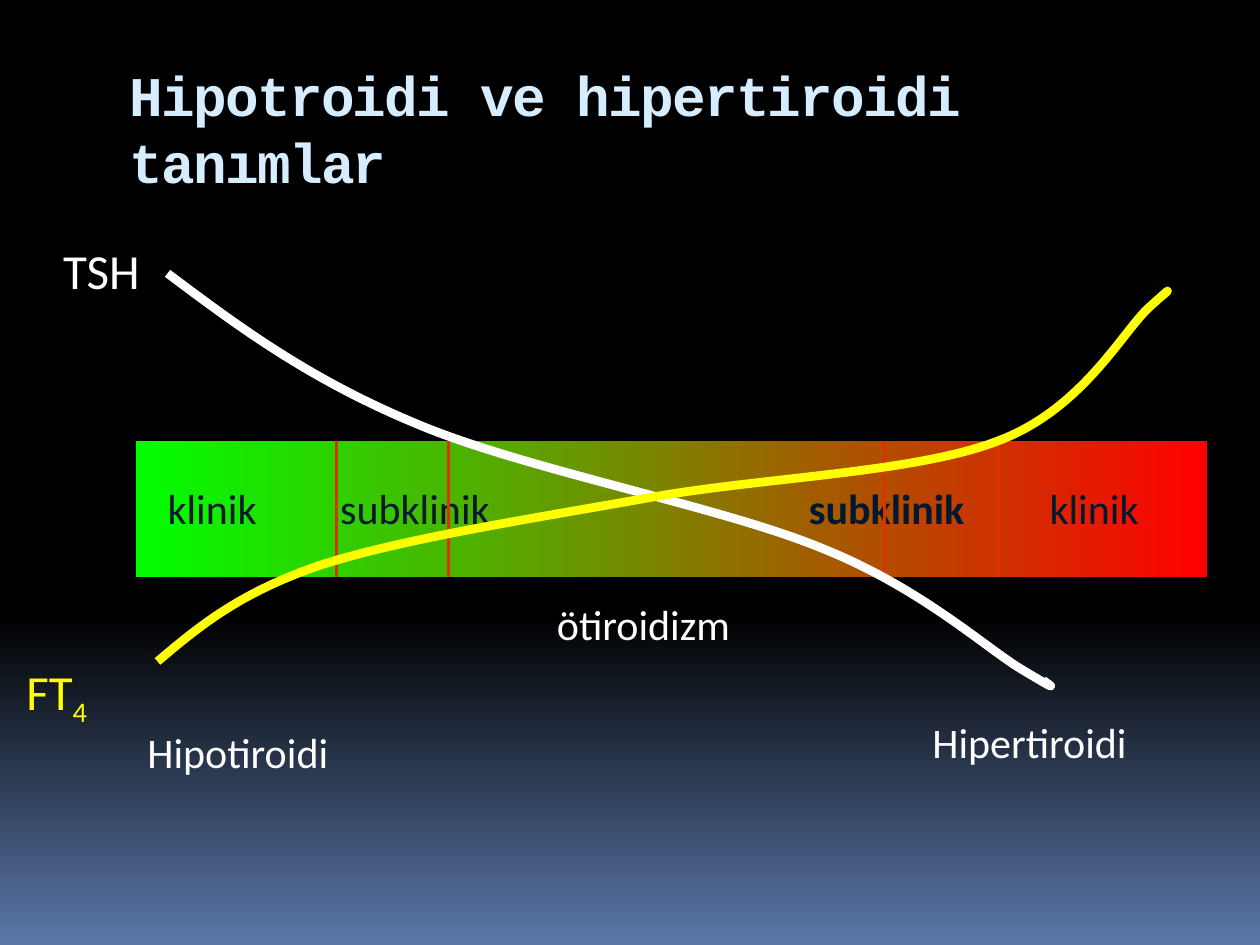
from lxml import etree
from pptx import Presentation
from pptx.dml.color import RGBColor
from pptx.enum.shapes import MSO_CONNECTOR, MSO_SHAPE
from pptx.enum.text import MSO_ANCHOR
from pptx.oxml.ns import qn
from pptx.util import Inches, Pt

STRAIGHT = MSO_CONNECTOR.STRAIGHT
RECTANGLE = MSO_SHAPE.RECTANGLE
MIDDLE = MSO_ANCHOR.MIDDLE

COLORS = {
    "black": "000000",
    "blue": "5B77A8",
    "green": "00FF00",
    "red": "FF0000",
    "title": "D6ECFF",
    "white": "FFFFFF",
    "yellow": "FFFF00",
    "navy": "00192F",
    "divider": "D83300",
}

BAND_LEFT, BAND_TOP, BAND_WIDTH, BAND_HEIGHT = 1.08, 3.5, 8.5, 1.08
BAND_LABEL_TOP = 3.83
DIVIDERS = (3.56, 2.67, 7.92, 7.02)

TSH_CURVE = [
    (1.33, 2.17),
    (1.89, 2.59), (2.45, 3.01), (3.32, 3.37),
    (4.18, 3.73), (5.72, 4.02), (6.52, 4.35),
    (7.32, 4.67), (7.83, 5.15), (8.12, 5.32),
    (8.42, 5.5), (8.35, 5.45), (8.28, 5.4),
]
FT4_CURVE = [
    (1.25, 5.25),
    (1.57, 4.98), (1.89, 4.71), (2.53, 4.49),
    (3.17, 4.28), (4.2, 4.12), (5.1, 3.96),
    (6, 3.79), (7.25, 3.76), (7.92, 3.5),
    (8.59, 3.25), (8.91, 2.63), (9.12, 2.44),
    (9.33, 2.25), (9.27, 2.31), (9.21, 2.36),
]


def rgb(name):
    """Return the named colour."""
    return RGBColor.from_string(COLORS[name])


def set_gradient(fill, start, end, angle, start_position=0):
    """Apply a linear gradient between two named colours."""
    fill.gradient()
    fill.gradient_angle = angle
    first, last = fill.gradient_stops
    first.color.rgb, first.position = rgb(start), start_position
    last.color.rgb, last.position = rgb(end), 1


def style_run(run, size, color, bold=False, font_name="Calibri"):
    """Set the font of a run."""
    run.font.name = font_name
    run.font.size = Pt(size)
    run.font.bold = bold
    run.font.color.rgb = rgb(color)


def add_title(slide, text):
    """Add the slide title with slightly tightened letters."""
    box = slide.shapes.add_textbox(Inches(0.93), Inches(0.39), Inches(8.83), Inches(1.25))
    frame = box.text_frame
    frame.text = text
    frame.word_wrap = True
    frame.vertical_anchor = MIDDLE
    run = frame.paragraphs[0].runs[0]
    style_run(run, 32, "title", True, "Courier New")
    run.font._element.set("spc", "-100")


def add_label(shapes, text, left, top, width, color, size=24, bold=False, wrap=False):
    """Add a text box without margins and return its paragraph."""
    box = shapes.add_textbox(Inches(left), Inches(top), Inches(width), Inches(size / 60))
    frame = box.text_frame
    frame.margin_left = frame.margin_right = frame.margin_top = frame.margin_bottom = 0
    frame.text = text
    frame.word_wrap = wrap
    paragraph = frame.paragraphs[0]
    style_run(paragraph.runs[0], size, color, bold)
    return paragraph


def add_subscript(paragraph, text, size, color):
    """Append a subscript run."""
    run = paragraph.add_run()
    run.text = text
    style_run(run, size, color)
    run.font._element.set("baseline", "-25000")


def add_band(slide):
    """Add the green to red band."""
    band = slide.shapes.add_shape(
        RECTANGLE, Inches(BAND_LEFT), Inches(BAND_TOP), Inches(BAND_WIDTH), Inches(BAND_HEIGHT))
    band.shadow.inherit = False
    band.line.fill.background()
    set_gradient(band.fill, "green", "red", 0)


def add_divider(slide, x):
    """Add a vertical line across the band."""
    divider = slide.shapes.add_connector(
        STRAIGHT, Inches(x), Inches(BAND_TOP), Inches(x), Inches(BAND_TOP + BAND_HEIGHT))
    divider.line.color.rgb = rgb("divider")
    divider.line.width = Pt(2)
    etree.SubElement(divider._element.spPr, qn("a:effectLst"))


def add_curve(slide, points, color):
    """Add an open cubic curve from a start point and triples of control points."""
    start, *controls = [(Inches(x), Inches(y)) for x, y in points]
    builder = slide.shapes.build_freeform(*start)
    builder.add_line_segments(controls, close=False)
    curve = builder.convert_to_shape()
    curve.shadow.inherit = False
    curve.fill.background()
    curve.line.color.rgb = rgb(color)
    curve.line.width = Pt(5)
    path = next(curve._element.iter(qn("a:path")))
    segments = path.findall(qn("a:lnTo"))
    for index in range(0, len(segments), 3):
        bezier = etree.SubElement(path, qn("a:cubicBezTo"))
        for segment in segments[index:index + 3]:
            bezier.append(segment[0])
            path.remove(segment)


def main():
    """Build the slide and save it."""
    presentation = Presentation()
    presentation.slide_width, presentation.slide_height = Inches(10), Inches(7.5)
    slide = presentation.slides.add_slide(presentation.slide_layouts[6])
    set_gradient(slide.background.fill, "black", "blue", 270, 0.65)

    add_band(slide)
    add_title(slide, "Hipotroidi ve hipertiroidi tanımlar")
    add_label(slide.shapes, "TSH", 0.5, 1.91, 0.78, "white", 28)
    ft4 = add_label(slide.shapes, "FT", 0.21, 5.25, 1.04, "yellow", 28, wrap=True)
    add_subscript(ft4, "4", 28, "yellow")
    add_label(slide.shapes, "ötiroidizm", 4.42, 4.75, 1.43, "white")

    hypothyroid = slide.shapes.add_group_shape().shapes
    add_label(hypothyroid, "klinik", 1.33, BAND_LABEL_TOP, 0.74, "navy")
    add_label(hypothyroid, "Hipotiroidi", 1.17, 5.77, 1.49, "white")
    add_label(hypothyroid, "subklinik", 2.7, BAND_LABEL_TOP, 1.43, "navy", wrap=True)

    hyperthyroid = slide.shapes.add_group_shape().shapes
    add_label(hyperthyroid, "klinik", 8.33, BAND_LABEL_TOP, 0.74, "navy")
    add_label(hyperthyroid, "Hipertiroidi", 7.4, 5.69, 1.59, "white")
    add_label(hyperthyroid, "subklinik", 6.42, BAND_LABEL_TOP, 1.33, "navy", bold=True, wrap=True)

    for x in DIVIDERS:
        add_divider(slide, x)
    add_curve(slide, TSH_CURVE, "white")
    add_curve(slide, FT4_CURVE, "yellow")
    presentation.save("out.pptx")


if __name__ == "__main__":
    main()
